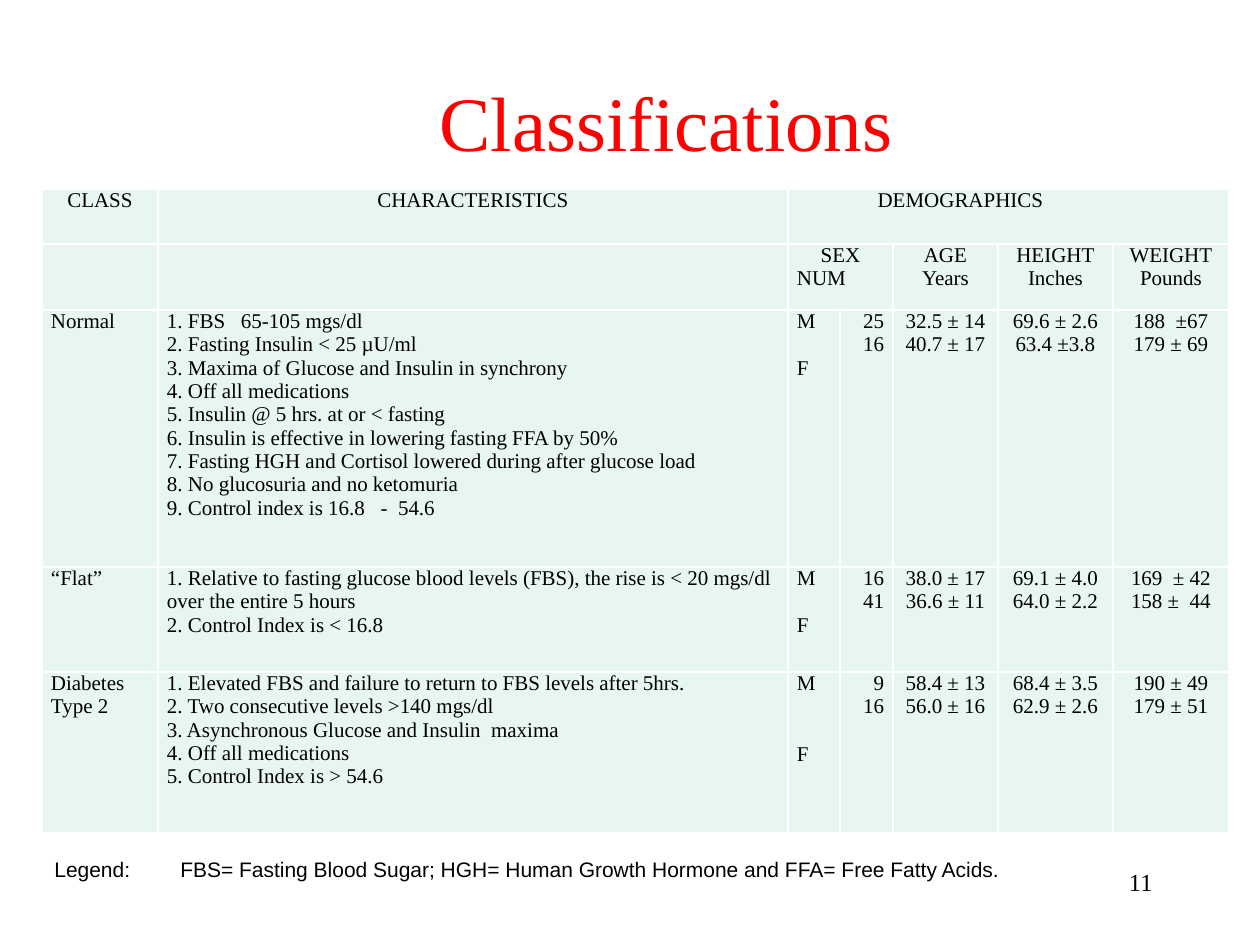
from dataclasses import dataclass

from lxml.etree import SubElement
from pptx import Presentation
from pptx.dml.color import RGBColor
from pptx.enum.text import MSO_ANCHOR, PP_ALIGN
from pptx.oxml.ns import qn
from pptx.slide import Slide
from pptx.table import Table, _Cell
from pptx.text.text import TextFrame
from pptx.util import Emu, Pt

PX_PER_INCH = 126
LEFT, CENTER, RIGHT = PP_ALIGN.LEFT, PP_ALIGN.CENTER, PP_ALIGN.RIGHT


@dataclass(frozen=True)
class Theme:
    serif: str = "Times New Roman"
    sans: str = "Arial"
    title_color: str = "FF0000"
    text_color: str = "000000"
    cell_fill: str = "E7F6EF"
    border: str = "FFFFFF"
    border_width: int = 1
    title_size: int = 44
    body_size: int = 12
    page_size: int = 14
    line_height: float = 13.5


THEME = Theme()


@dataclass(frozen=True)
class Label:
    text: str
    left: int
    top: int
    width: int
    height: int
    size: int
    font: str = THEME.serif
    color: str = THEME.text_color
    align: PP_ALIGN = LEFT
    anchor: MSO_ANCHOR = MSO_ANCHOR.TOP


@dataclass(frozen=True)
class Heading:
    row: int
    column: int
    text: str
    span: int = 1
    right_inset: int = 9


@dataclass(frozen=True)
class Group:
    """One class of subjects; sex_gap counts the lines left between M and F."""
    name: str
    characteristics: str
    sex_gap: int
    count: str
    age: str
    height: str
    weight: str


LABELS = [
    Label("Classifications", 315, 84, 703, 73, THEME.title_size,
          color=THEME.title_color, align=CENTER, anchor=MSO_ANCHOR.MIDDLE),
    Label("Legend:\tFBS= Fasting Blood Sugar; HGH= Human Growth Hormone "
          "and FFA= Free Fatty Acids.",
          42, 850, 1187, 123, THEME.body_size, font=THEME.sans),
    Label("11", 903, 861, 262, 63, THEME.page_size, align=RIGHT),
]

TABLE_LEFT, TABLE_TOP = 42, 189
COLUMN_WIDTHS = [116, 630, 52, 53, 105, 115, 116]
ROW_HEIGHTS = [55, 66, 257, 105, 161]
COLUMN_ALIGNS = [LEFT, LEFT, LEFT, RIGHT, CENTER, CENTER, CENTER]
CELL_INSET = 9

HEADINGS = [
    Heading(0, 0, "CLASS"),
    Heading(0, 1, "CHARACTERISTICS"),
    Heading(0, 2, "DEMOGRAPHICS", span=5, right_inset=105),
    Heading(1, 2, "SEX\nNUM", span=2),
    Heading(1, 4, "AGE\nYears"),
    Heading(1, 5, "HEIGHT\nInches"),
    Heading(1, 6, "WEIGHT\nPounds"),
]

GROUPS = [
    Group("Normal",
          "1. FBS   65-105 mgs/dl\n"
          "2. Fasting Insulin < 25 µU/ml\n"
          "3. Maxima of Glucose and Insulin in synchrony\n"
          "4. Off all medications\n"
          "5. Insulin @ 5 hrs. at or < fasting\n"
          "6. Insulin is effective in lowering fasting FFA by 50%\n"
          "7. Fasting HGH and Cortisol lowered during after glucose load\n"
          "8. No glucosuria and no ketomuria\n"
          "9. Control index is 16.8   -  54.6",
          1, "25\n16", "32.5 ± 14\n40.7 ± 17",
          "69.6 ± 2.6\n63.4 ±3.8", "188  ±67\n179 ± 69"),
    Group("“Flat”",
          "1. Relative to fasting glucose blood levels (FBS), the rise is "
          "< 20 mgs/dl over the entire 5 hours\n"
          "2. Control Index is < 16.8",
          1, "16\n41", "38.0 ± 17\n36.6 ± 11",
          "69.1 ± 4.0\n64.0 ± 2.2", "169  ± 42\n158 ±  44"),
    Group("Diabetes\nType 2",
          "1. Elevated FBS and failure to return to FBS levels after 5hrs.\n"
          "2. Two consecutive levels >140 mgs/dl\n"
          "3. Asynchronous Glucose and Insulin  maxima\n"
          "4. Off all medications\n"
          "5. Control Index is > 54.6",
          2, "9\n16", "58.4 ± 13\n56.0 ± 16",
          "68.4 ± 3.5\n62.9 ± 2.6", "190 ± 49\n179 ± 51"),
]


def px(length: int) -> Emu:
    return Emu(round(length * 914400 / PX_PER_INCH))


def write(frame: TextFrame, text: str, align: PP_ALIGN,
          size: int = THEME.body_size, font: str = THEME.serif,
          color: str = THEME.text_color) -> None:
    frame.text = text
    for paragraph in frame.paragraphs:
        paragraph.alignment = align
        for run in paragraph.runs:
            run.font.size = Pt(size)
            run.font.name = font
            run.font.bold = False
            run.font.color.rgb = RGBColor.from_string(color)


def draw_label(slide: Slide, label: Label) -> None:
    box = slide.shapes.add_textbox(px(label.left), px(label.top),
                                   px(label.width), px(label.height))
    frame = box.text_frame
    frame.word_wrap = True
    frame.vertical_anchor = label.anchor
    write(frame, label.text, label.align, label.size, label.font, label.color)


def style_cell(cell: _Cell) -> None:
    cell.margin_left = cell.margin_right = px(CELL_INSET)
    cell.margin_top = cell.margin_bottom = 0
    properties = cell._tc.get_or_add_tcPr()
    for side in ("a:lnL", "a:lnR", "a:lnT", "a:lnB"):
        line = SubElement(properties, qn(side), w=str(Pt(THEME.border_width)))
        fill = SubElement(line, qn("a:solidFill"))
        SubElement(fill, qn("a:srgbClr"), val=THEME.border)
    cell.fill.solid()
    cell.fill.fore_color.rgb = RGBColor.from_string(THEME.cell_fill)


def add_grid(slide: Slide) -> Table:
    table = slide.shapes.add_table(
        len(ROW_HEIGHTS), len(COLUMN_WIDTHS), px(TABLE_LEFT), px(TABLE_TOP),
        px(sum(COLUMN_WIDTHS)), px(sum(ROW_HEIGHTS))).table
    table.first_row = table.horz_banding = False
    for column, width in zip(table.columns, COLUMN_WIDTHS):
        column.width = px(width)
    for row, height in zip(table.rows, ROW_HEIGHTS):
        row.height = px(height)
    for cell in table.iter_cells():
        style_cell(cell)
    return table


def fill_heading(table: Table, heading: Heading) -> None:
    cell = table.cell(heading.row, heading.column)
    if heading.span > 1:
        cell.merge(table.cell(heading.row, heading.column + heading.span - 1))
    cell.margin_right = px(heading.right_inset)
    write(cell.text_frame, heading.text, CENTER)


def fill_group(table: Table, row: int, group: Group) -> None:
    texts = [group.name, group.characteristics, "M\nF", group.count,
             group.age, group.height, group.weight]
    for column, (text, align) in enumerate(zip(texts, COLUMN_ALIGNS)):
        write(table.cell(row, column).text_frame, text, align)
    female = table.cell(row, 2).text_frame.paragraphs[1]
    female.space_before = Pt(group.sex_gap * THEME.line_height)


def main() -> None:
    presentation = Presentation()
    presentation.slide_width, presentation.slide_height = px(1260), px(945)
    slide = presentation.slides.add_slide(presentation.slide_layouts[6])
    table = add_grid(slide)
    for heading in HEADINGS:
        fill_heading(table, heading)
    table.cell(1, 2).text_frame.paragraphs[1].alignment = LEFT
    for row, group in enumerate(GROUPS, start=2):
        fill_group(table, row, group)
    for label in LABELS:
        draw_label(slide, label)
    presentation.save("out.pptx")


if __name__ == "__main__":
    main()
